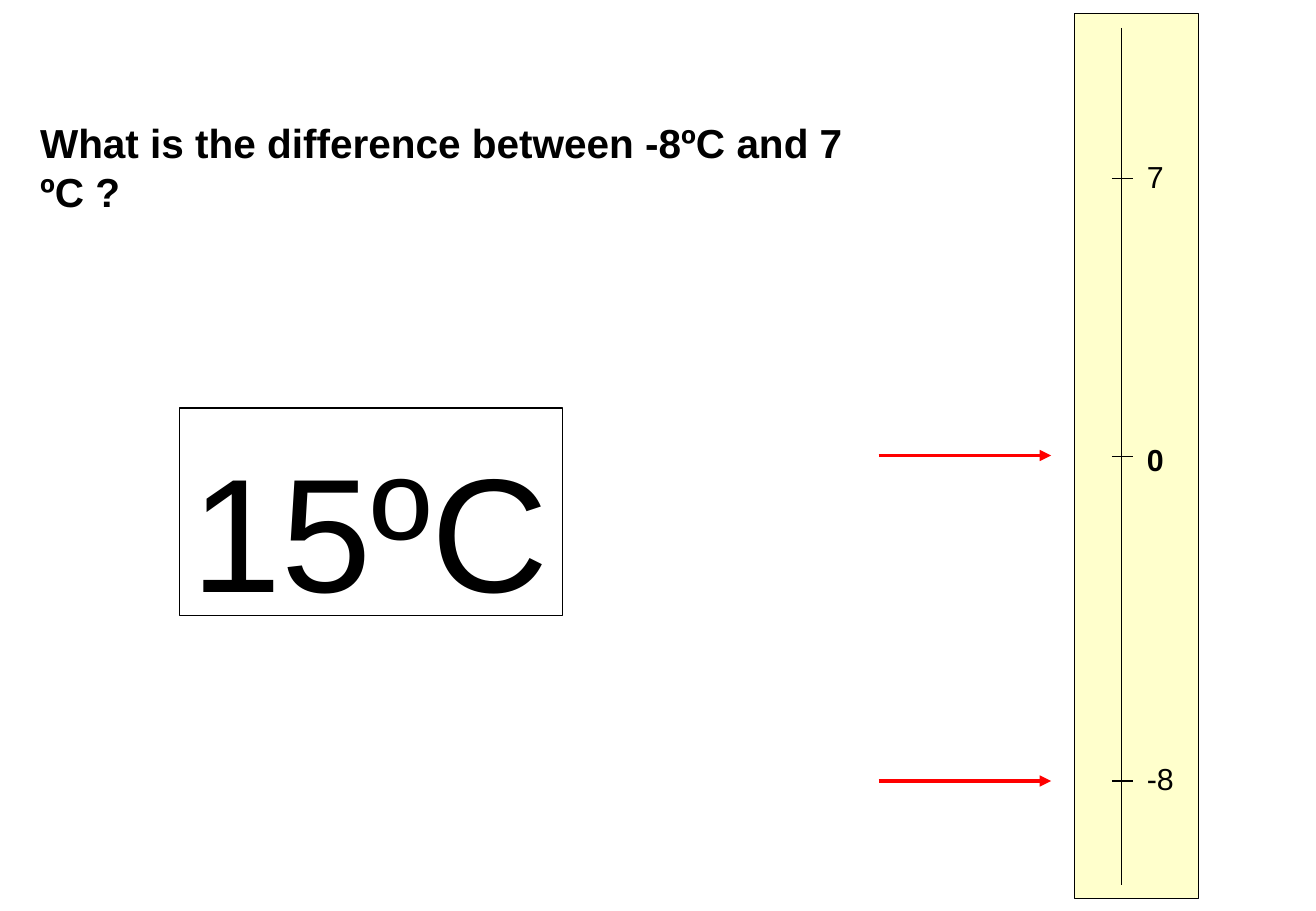
from dataclasses import dataclass
from typing import Any

from lxml.etree import SubElement
from pptx import Presentation
from pptx.dml.color import RGBColor
from pptx.enum.shapes import MSO_CONNECTOR, MSO_SHAPE
from pptx.enum.text import MSO_ANCHOR, MSO_AUTO_SIZE, PP_ALIGN
from pptx.oxml.ns import qn
from pptx.util import Inches, Pt

BLACK = RGBColor(0x00, 0x00, 0x00)
RED = RGBColor(0xFF, 0x00, 0x00)
PALE_YELLOW = RGBColor(0xFF, 0xFF, 0xCC)
WIDTH, HEIGHT = Inches(10.83), Inches(7.5)
SCALE_X, TICK_LEFT, TICK_RIGHT = 85.23, 84.49, 86.06
ARROW_LEFT, ARROW_RIGHT = 66.76, 79.87
LABEL_LEFT, LABEL_HEIGHT = 86.24, 5.33


@dataclass(frozen=True)
class Box:
    """A rectangle in percent of the slide's width and height."""

    left: float
    top: float
    width: float
    height: float


@dataclass(frozen=True)
class Mark:
    """A labelled temperature on the scale."""

    label: str
    y: float
    label_top: float
    label_width: float
    bold: bool = False


@dataclass(frozen=True)
class Line:
    """A straight line in percent of the slide's width and height."""

    x1: float
    y1: float
    x2: float
    y2: float
    color: RGBColor = BLACK
    weight: float = 0.75
    arrow: bool = False


MARKS = (
    Mark("7", 19.6, 16.4, 3.14),
    Mark("0", 50.13, 47.47, 3.14, bold=True),
    Mark("-8", 85.73, 82.4, 3.88),
)
ARROW_ROWS = (50, 85.73)


def across(share: float) -> int:
    """Convert a percentage of the slide's width to a length."""
    return round(WIDTH * share / 100)


def down(share: float) -> int:
    """Convert a percentage of the slide's height to a length."""
    return round(HEIGHT * share / 100)


def apply_format(target: Any, values: dict[str, Any]) -> None:
    """Set each named attribute on the target."""
    for name, value in values.items():
        setattr(target, name, value)


def place(box: Box) -> tuple[int, int, int, int]:
    """Give the left, top, width and height of a box."""
    return across(box.left), down(box.top), across(box.width), down(box.height)


def write_text(shape: Any, text: str, size: float, bold: bool = False) -> None:
    """Write one unwrapped line, lowered in proportion to its size."""
    frame = shape.text_frame
    frame.text = text
    apply_format(frame, {
        "word_wrap": False,
        "auto_size": MSO_AUTO_SIZE.NONE,
        "vertical_anchor": MSO_ANCHOR.TOP,
        "margin_left": Inches(0.1),
        "margin_right": Inches(0.1),
        "margin_top": Inches(0.05) + Pt(size * 0.1),
        "margin_bottom": 0,
    })
    paragraph = frame.paragraphs[0]
    paragraph.alignment = PP_ALIGN.LEFT
    font = paragraph.runs[0].font
    apply_format(font, {"name": "Arial", "size": Pt(size), "bold": bold})
    font.color.rgb = BLACK


def add_rectangle(slide: Any, box: Box, fill: RGBColor | None = None) -> Any:
    """Add a thinly outlined rectangle, filled if a colour is given."""
    shape = slide.shapes.add_shape(MSO_SHAPE.RECTANGLE, *place(box))
    shape.shadow.inherit = False
    if fill is None:
        shape.fill.background()
    else:
        shape.fill.solid()
        shape.fill.fore_color.rgb = fill
    shape.line.color.rgb = BLACK
    shape.line.width = Pt(0.75)
    return shape


def add_line(slide: Any, line: Line) -> None:
    """Add a straight line, with an arrowhead at its end if asked."""
    connector = slide.shapes.add_connector(
        MSO_CONNECTOR.STRAIGHT,
        across(line.x1), down(line.y1), across(line.x2), down(line.y2),
    )
    connector.line.color.rgb = line.color
    connector.line.width = Pt(line.weight)
    if line.arrow:
        SubElement(connector.line._get_or_add_ln(), qn("a:tailEnd"), type="triangle")
    SubElement(connector._element.spPr, qn("a:effectLst"))


def add_mark(slide: Any, mark: Mark) -> None:
    """Add the tick and label of one temperature."""
    add_line(slide, Line(TICK_LEFT, mark.y, TICK_RIGHT, mark.y))
    box = Box(LABEL_LEFT, mark.label_top, mark.label_width, LABEL_HEIGHT)
    write_text(slide.shapes.add_textbox(*place(box)), mark.label, 18, mark.bold)


def main() -> None:
    """Build the temperature difference slide."""
    presentation = Presentation()
    apply_format(presentation, {"slide_width": WIDTH, "slide_height": HEIGHT})
    slide = presentation.slides.add_slide(presentation.slide_layouts[5])

    title = slide.shapes.title
    edges = place(Box(2.12, 11.87, 69.71, 6.67))
    apply_format(title, dict(zip(("left", "top", "width", "height"), edges)))
    write_text(title, "What is the difference between -8ºC and 7 ºC ?", 24, bold=True)

    add_rectangle(slide, Box(81.63, 1.47, 9.42, 97.2), PALE_YELLOW)
    add_line(slide, Line(SCALE_X, 3.07, SCALE_X, 97.2))
    for mark in MARKS:
        add_mark(slide, mark)
    for row in ARROW_ROWS:
        add_line(slide, Line(ARROW_LEFT, row, ARROW_RIGHT, row, RED, 2.25, arrow=True))

    answer = add_rectangle(slide, Box(13.67, 44.8, 29.09, 22.8))
    write_text(answer, "15ºC", 96)
    presentation.save("out.pptx")


if __name__ == "__main__":
    main()
